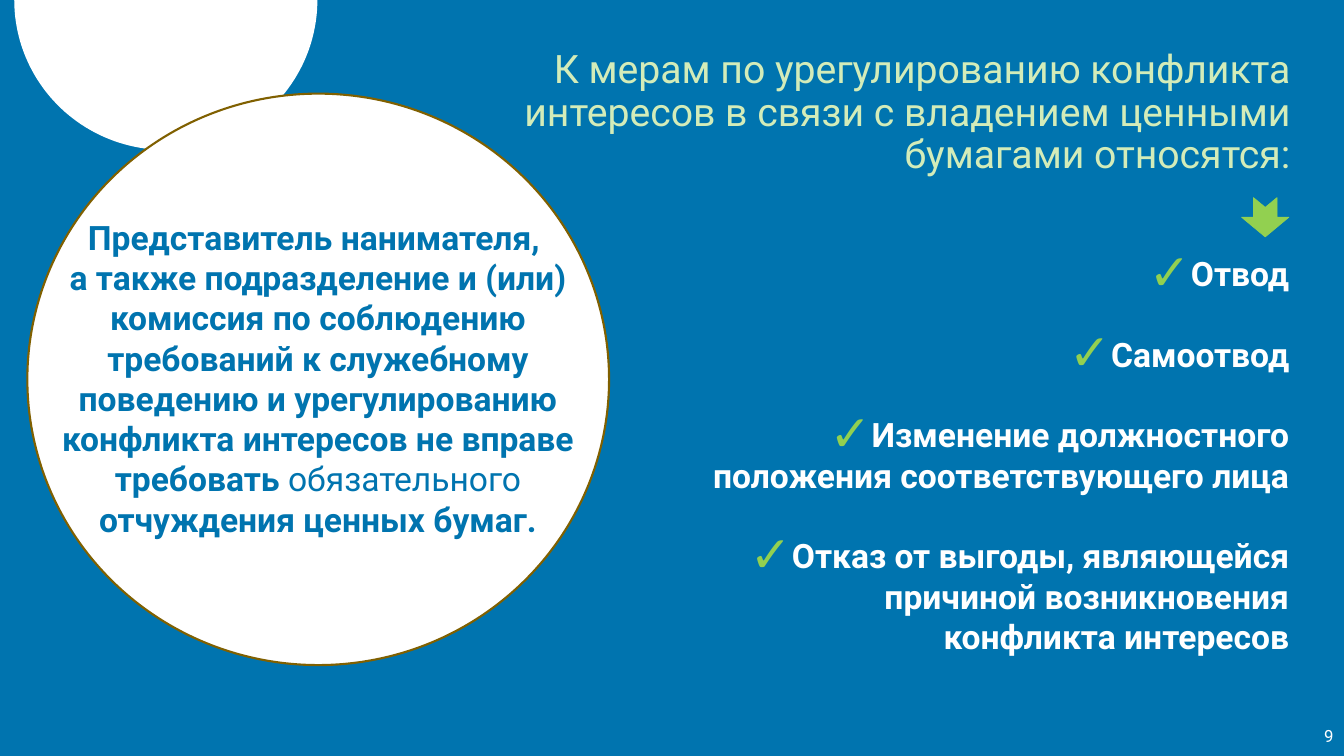
import math

import pptx
import pptx.dml.color
import pptx.enum.shapes
import pptx.enum.text
import pptx.oxml
import pptx.oxml.ns
import pptx.util

Cm, Pt = pptx.util.Cm, pptx.util.Pt
Align = pptx.enum.text.PP_ALIGN
Shape = pptx.enum.shapes.MSO_SHAPE

COLORS = {
    "blue": "0074AF",
    "white": "FFFFFF",
    "brown": "806000",
    "mint": "D3ECB9",
    "green": "92D050",
}
FONT = "Roboto"


def color(name):
    return pptx.dml.color.RGBColor.from_string(COLORS[name])


class SlidePainter:
    def __init__(self, page):
        self.page = page

    def background(self, name):
        self.page.background.fill.solid()
        self.page.background.fill.fore_color.rgb = color(name)

    def paint(self, shape, fill, line=None, width=0):
        shape.shadow.inherit = False
        shape.fill.solid()
        shape.fill.fore_color.rgb = color(fill)
        if line:
            shape.line.color.rgb = color(line)
            shape.line.width = Pt(width)
        else:
            shape.line.fill.background()

    def half_disc(self, center_x, radius_x, radius_y, fill):
        """Lower half of an ellipse hanging from the top edge."""
        points = [
            (Cm(center_x + radius_x * math.cos(math.radians(angle))),
             Cm(radius_y * math.sin(math.radians(angle))))
            for angle in range(0, 181, 2)
        ]
        builder = self.page.shapes.build_freeform(*points[0])
        builder.add_line_segments(points[1:], close=True)
        self.paint(builder.convert_to_shape(), fill)

    def preset(self, kind, area, fill, line, width, rotation=0):
        shape = self.page.shapes.add_shape(kind, *map(Cm, area))
        shape.rotation = rotation
        self.paint(shape, fill, line, width)

    def text(self, area, lines, size, name, align, bold=False, wrap=True):
        box = self.page.shapes.add_textbox(*map(Cm, area))
        box.text_frame.word_wrap = wrap
        box.text_frame.text = "\n".join(lines)
        for para in box.text_frame.paragraphs:
            para.alignment = align
            for span in para.runs:
                self.style(span, size, name, bold)
        return box.text_frame

    def style(self, span, size, name, bold):
        span.font.name = FONT
        span.font.size = Pt(size)
        span.font.bold = bold
        span.font.color.rgb = color(name)

    def check_bullet(self, para):
        props = para._p.get_or_add_pPr()
        props.set("marL", str(Cm(0.95)))
        props.set("indent", str(-Cm(0.95)))
        namespace = pptx.oxml.ns.nsdecls("a")
        for xml in (
            f'<a:buClr {namespace}><a:srgbClr val="{COLORS["green"]}"/></a:buClr>',
            f'<a:buSzPct {namespace} val="150000"/>',
            f'<a:buFont {namespace} typeface="{FONT}"/>',
            f'<a:buChar {namespace} char="✓"/>',
        ):
            props.append(pptx.oxml.parse_xml(xml))


def main():
    deck = pptx.Presentation()
    deck.slide_width, deck.slide_height = Cm(33.87), Cm(19.05)
    painter = SlidePainter(deck.slides.add_slide(deck.slide_layouts[6]))

    # Background and circles
    painter.background("blue")
    painter.half_disc(4.18, 3.82, 3.78, "white")
    painter.preset(Shape.OVAL, (0.69, 2.36, 14.66, 14.4), "white", "brown", 1.5)

    # Heading
    heading = painter.text(
        (11.33, 1.12, 21.44, 3.48),
        ["К мерам по урегулированию конфликта интересов в связи с владением "
         "ценными бумагами относятся:"],
        28, "mint", Align.RIGHT)
    heading.vertical_anchor = pptx.enum.text.MSO_ANCHOR.MIDDLE
    heading.paragraphs[0].line_spacing = 0.9

    # List of measures
    measures = painter.text(
        (16.71, 6.25, 16.03, 10.52),
        ["Отвод",
         "Самоотвод",
         "Изменение должностного положения соответствующего лица",
         "Отказ от выгоды, являющейся причиной возникновения конфликта интересов"],
        24, "white", Align.RIGHT, bold=True)
    for number, para in enumerate(measures.paragraphs):
        para.space_before = Pt(28.8 if number else 0)
        painter.check_bullet(para)

    # Statement in the circle
    statement = painter.text(
        (1.22, 5.33, 13.59, 8.46),
        ["Представитель нанимателя, ",
         "а также подразделение и (или) комиссия по соблюдению требований к "
         "служебному поведению и урегулированию конфликта интересов не вправе "
         "требовать "],
        24, "blue", Align.CENTER, bold=True)
    for words, bold in (("обязательного", False), (" отчуждения ценных бумаг.", True)):
        span = statement.paragraphs[1].add_run()
        span.text = words
        painter.style(span, 24, "blue", bold)

    # Arrow and page number
    painter.preset(Shape.NOTCHED_RIGHT_ARROW, (31.39, 4.88, 0.99, 1.19),
                   "green", "green", 0.5, rotation=90)
    painter.text((33.12, 18.16, 0.74, 0.76), ["9"], 12, "white", Align.LEFT, wrap=False)

    deck.save("out.pptx")


if __name__ == "__main__":
    main()
